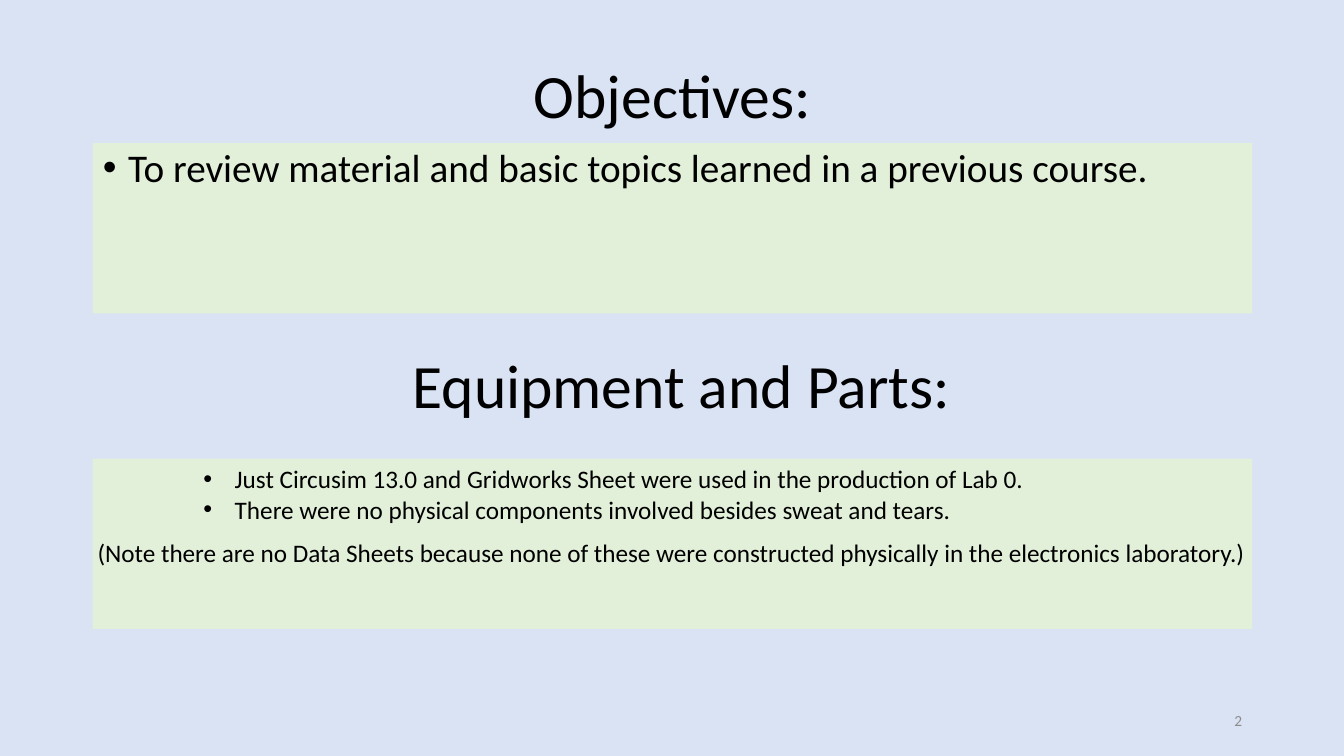
from lxml.etree import SubElement
from pptx import Presentation
from pptx.dml.color import RGBColor
from pptx.enum.shapes import MSO_SHAPE
from pptx.enum.text import MSO_ANCHOR, MSO_AUTO_SIZE, PP_ALIGN
from pptx.oxml.ns import qn
from pptx.util import Inches, Pt

FONT = "Calibri"
BLACK = "000000"
GREY = "8C8C8C"
PALE_BLUE = "DAE3F3"
PALE_GREEN = "E2F0D9"

LEFT = 0.92
WIDTH = 11.5
HEADING_HEIGHT = 1.45
PANEL_HEIGHT = 1.69


def paint(fill, color):
    fill.solid()
    fill.fore_color.rgb = RGBColor.from_string(color)


def place(shape, left, top, width, height):
    shape.left, shape.top = Inches(left), Inches(top)
    shape.width, shape.height = Inches(width), Inches(height)


def write_lines(shape, lines, size, align, anchor, color=BLACK, spacing=1.0, before=0, wrap=True):
    frame = shape.text_frame
    frame.auto_size = MSO_AUTO_SIZE.NONE
    frame.word_wrap = wrap
    frame.vertical_anchor = anchor
    frame.text = "\n".join(lines)
    for para in frame.paragraphs:
        para.alignment = align
        para.line_spacing = spacing
        para.space_before = Pt(before)
        para.font.name = FONT
        para.font.size = Pt(size)
        para.font.color.rgb = RGBColor.from_string(color)


def add_bullets(shape, margin, hanging):
    for para in shape.text_frame.paragraphs:
        properties = para._p.get_or_add_pPr()
        properties.set("marL", str(Inches(margin)))
        properties.set("indent", str(-Inches(hanging)))
        for old in properties.findall(qn("a:buNone")):
            properties.remove(old)
        bullet_font = SubElement(properties, qn("a:buFont"))
        bullet_font.set("typeface", "Arial")
        bullet = SubElement(properties, qn("a:buChar"))
        bullet.set("char", "•")
        default_run = properties.find(qn("a:defRPr"))
        if default_run is not None:
            properties.append(default_run)


def write_heading(shape, text):
    write_lines(shape, [text], 44, PP_ALIGN.CENTER, MSO_ANCHOR.MIDDLE, spacing=0.9)


def add_objectives(page, left, top):
    heading = page.shapes.title
    place(heading, left, top, WIDTH, HEADING_HEIGHT)
    write_heading(heading, "Objectives:")

    goals = page.placeholders[1]
    place(goals, left, top + 1.17, WIDTH, PANEL_HEIGHT)
    paint(goals.fill, PALE_GREEN)
    write_lines(
        goals,
        ["To review material and basic topics learned in a previous course."],
        28, PP_ALIGN.LEFT, MSO_ANCHOR.TOP, spacing=0.9, before=10,
    )
    add_bullets(goals, 0.25, 0.25)


def add_text_box(page, left, top, width, height):
    return page.shapes.add_textbox(Inches(left), Inches(top), Inches(width), Inches(height))


def add_equipment(page, left, top):
    heading = add_text_box(page, left + 0.09, top, WIDTH, HEADING_HEIGHT)
    write_heading(heading, "Equipment and Parts:")

    parts = page.shapes.add_shape(
        MSO_SHAPE.RECTANGLE, Inches(left), Inches(top + 1.42), Inches(WIDTH), Inches(PANEL_HEIGHT)
    )
    parts.shadow.inherit = False
    parts.line.fill.background()
    paint(parts.fill, PALE_GREEN)
    write_lines(
        parts,
        [
            "Just Circusim 13.0 and Gridworks Sheet were used in the production of Lab 0.",
            "There were no physical components involved besides sweat and tears.",
        ],
        18, PP_ALIGN.LEFT, MSO_ANCHOR.TOP,
    )
    add_bullets(parts, 1.31, 0.31)

    note = add_text_box(page, left - 0.12, top + 2.15, 11.72, 0.4)
    write_lines(
        note,
        ["(Note there are no Data Sheets because none of these were constructed "
         "physically in the electronics laboratory.)"],
        18, PP_ALIGN.CENTER, MSO_ANCHOR.TOP, wrap=False,
    )


def add_page_number(page, left, top):
    number = add_text_box(page, left, top, 3, 0.4)
    write_lines(number, ["2"], 11, PP_ALIGN.RIGHT, MSO_ANCHOR.MIDDLE, color=GREY)


def main():
    deck = Presentation()
    deck.slide_width, deck.slide_height = Inches(13.33), Inches(7.5)
    page = deck.slides.add_slide(deck.slide_layouts[1])
    paint(page.background.fill, PALE_BLUE)
    add_objectives(page, LEFT, 0.25)
    add_equipment(page, LEFT, 3.13)
    add_page_number(page, LEFT + WIDTH - 3, 6.95)
    deck.save("out.pptx")


if __name__ == "__main__":
    main()
